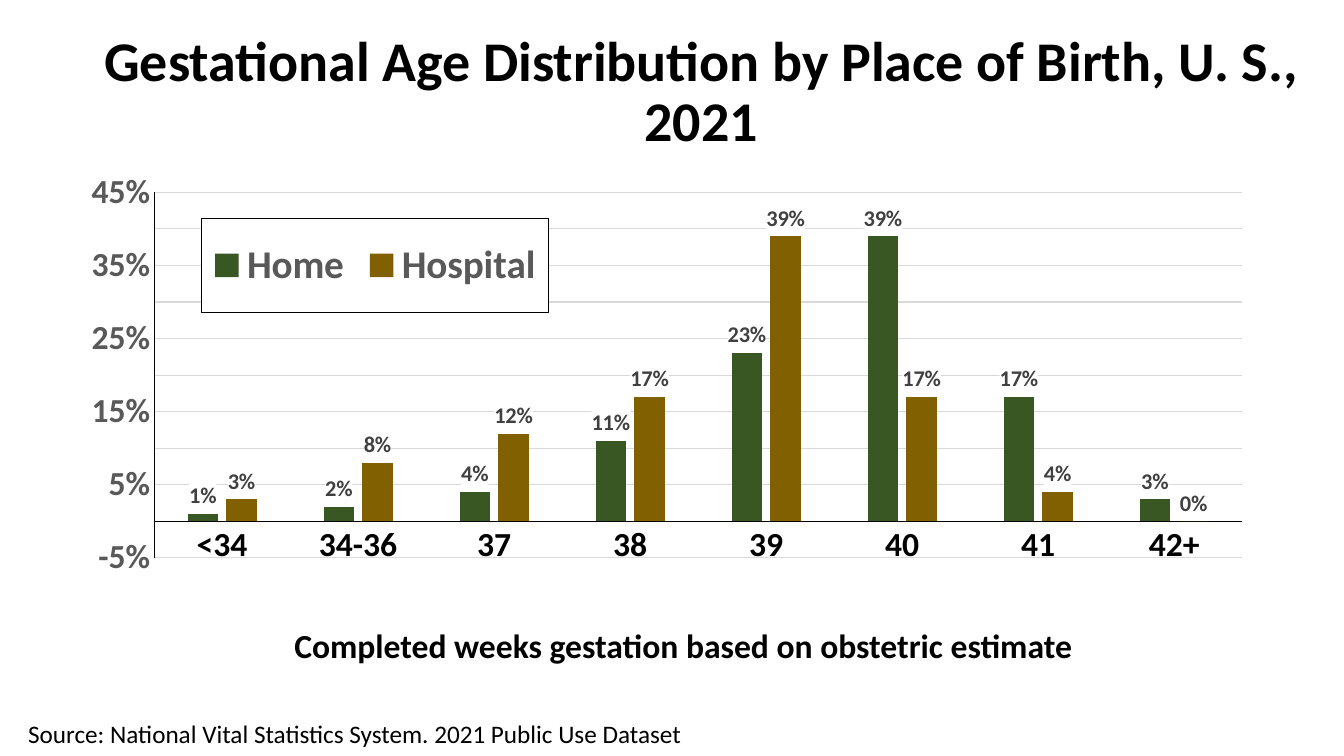
import pptx
import pptx.chart.data
import pptx.dml.color
import pptx.enum.chart
import pptx.enum.text
import pptx.oxml
import pptx.oxml.ns
import pptx.util
from pptx.util import Inches

BLACK = pptx.dml.color.RGBColor(0x00, 0x00, 0x00)
WHITE = pptx.dml.color.RGBColor(0xFF, 0xFF, 0xFF)
AXIS_GREY = pptx.dml.color.RGBColor(0x59, 0x59, 0x59)
LABEL_GREY = pptx.dml.color.RGBColor(0x40, 0x40, 0x40)
GRID_GREY = pptx.dml.color.RGBColor(0xD9, 0xD9, 0xD9)
HOME_GREEN = pptx.dml.color.RGBColor(0x38, 0x57, 0x23)
HOSPITAL_BROWN = pptx.dml.color.RGBColor(0x80, 0x60, 0x00)

FONT = "Calibri"
PERCENT = "0%"
WEEKS = ["<34", "34-36", "37", "38", "39", "40", "41", "42+"]
BIRTHS = [
    ("Home", [0.01, 0.02, 0.04, 0.11, 0.23, 0.39, 0.17, 0.03], HOME_GREEN),
    ("Hospital", [0.03, 0.08, 0.12, 0.17, 0.39, 0.17, 0.04, 0], HOSPITAL_BROWN),
]


def style_font(font, size, color, bold=True):
    """Set typeface, size, colour and weight of a font."""
    font.name = FONT
    font.size = pptx.util.Pt(size)
    font.bold = bold
    font.color.rgb = color


def style_line(line, color):
    """Give a line a colour and the chart's common width."""
    line.color.rgb = color
    line.width = pptx.util.Pt(0.75)


def add_text(slide, text, box, size, bold=True, wrap=True):
    """Add a one-paragraph text box and return its shape."""
    shape = slide.shapes.add_textbox(*map(Inches, box))
    shape.text_frame.word_wrap = wrap
    paragraph = shape.text_frame.paragraphs[0]
    paragraph.text = text
    style_font(paragraph.runs[0].font, size, BLACK, bold)
    return shape


def add_title(slide, text):
    """Add the centred slide title."""
    frame = add_text(slide, text, (0.74, 0.2, 12.43, 1.45), 40).text_frame
    frame.vertical_anchor = pptx.enum.text.MSO_ANCHOR.MIDDLE
    frame.paragraphs[0].alignment = pptx.enum.text.PP_ALIGN.CENTER
    frame.paragraphs[0].line_spacing = 0.9


def chart_xml(tag, content):
    """Build a chart element from its tag and inner XML."""
    spaces = pptx.oxml.ns.nsdecls("c", "a")
    return pptx.oxml.parse_xml(f"<c:{tag} {spaces}>{content}</c:{tag}>")


def solid_fill(color):
    """Return the XML of a solid fill."""
    return f'<a:solidFill><a:srgbClr val="{color}"/></a:solidFill>'


def manual_layout(x, y, w, h, target=""):
    """Build a manual layout from fractions of the chart area."""
    modes = '<c:xMode val="edge"/><c:yMode val="edge"/>'
    sizes = zip("xywh", (x, y, w, h))
    values = "".join(f'<c:{key} val="{value}"/>' for key, value in sizes)
    return chart_xml("layout", f"<c:manualLayout>{target}{modes}{values}</c:manualLayout>")


def style_axes(chart):
    """Format both axes and the gridlines."""
    weeks, share = chart.category_axis, chart.value_axis
    for axis, color in ((weeks, BLACK), (share, AXIS_GREY)):
        style_font(axis.tick_labels.font, 24, color)
        style_line(axis.format.line, BLACK)
        axis.major_tick_mark = pptx.enum.chart.XL_TICK_MARK.NONE
        axis.minor_tick_mark = pptx.enum.chart.XL_TICK_MARK.NONE
    share.minimum_scale, share.maximum_scale = -0.05, 0.45
    share.major_unit = 0.05
    share.tick_labels.number_format = PERCENT
    share.tick_labels.number_format_is_linked = False
    share.has_major_gridlines = True
    style_line(share.major_gridlines.format.line, GRID_GREY)


def style_series(series, color):
    """Colour a series and show its values."""
    series.format.fill.solid()
    series.format.fill.fore_color.rgb = color
    series.invert_if_negative = False
    labels = series.data_labels
    style_font(labels.font, 16, LABEL_GREY)
    labels.number_format = PERCENT
    labels.number_format_is_linked = False
    labels.show_value = True
    labels.position = pptx.enum.chart.XL_LABEL_POSITION.OUTSIDE_END


def whiten_labels(chart):
    """Put a white ground behind all value labels."""
    for number_format in chart.element.xpath("//c:dLbls/c:numFmt"):
        number_format.addnext(chart_xml("spPr", solid_fill(WHITE)))


def add_legend(chart):
    """Place the framed legend over the plot."""
    chart.has_legend = True
    legend = chart.legend
    legend.position = pptx.enum.chart.XL_LEGEND_POSITION.BOTTOM
    legend.include_in_layout = False
    style_font(legend.font, 28, AXIS_GREY)
    root = chart.element
    for layout in root.xpath("//c:legend/c:layout"):
        layout.getparent().remove(layout)
    root.xpath("//c:legend/c:legendPos")[0].addnext(manual_layout(0.12, 0.1, 0.29, 0.18))
    frame = f'{solid_fill(WHITE)}<a:ln w="9525">{solid_fill(BLACK)}</a:ln>'
    root.xpath("//c:legend/c:overlay")[0].addnext(chart_xml("spPr", frame))


def add_birth_chart(slide):
    """Add the clustered columns of births by gestational age."""
    data = pptx.chart.data.CategoryChartData(number_format=PERCENT)
    data.categories = WEEKS
    for place, shares, _ in BIRTHS:
        data.add_series(place, shares)
    kind = pptx.enum.chart.XL_CHART_TYPE.COLUMN_CLUSTERED
    box = map(Inches, (0.58, 1.65, 11.86, 5.18))
    chart = slide.shapes.add_chart(kind, *box, data).chart
    chart.has_title = False
    style_font(chart.font, 10, BLACK, False)
    plot = chart.plots[0]
    plot.gap_width, plot.overlap = 219, -27
    plot.vary_by_categories = False
    for series, (_, _, color) in zip(plot.series, BIRTHS):
        style_series(series, color)
    whiten_labels(chart)
    style_axes(chart)
    add_legend(chart)
    area = chart.element.xpath("//c:plotArea")[0]
    for layout in area.xpath("c:layout"):
        area.remove(layout)
    inner = '<c:layoutTarget val="inner"/>'
    area.insert(0, manual_layout(0.08, 0.05, 0.91, 0.7, inner))


def main():
    """Build and save the slide."""
    deck = pptx.Presentation()
    deck.slide_width, deck.slide_height = Inches(13.33), Inches(7.5)
    slide = deck.slides.add_slide(deck.slide_layouts[6])
    add_title(slide, "Gestational Age Distribution by Place of Birth, U. S., 2021")
    add_birth_chart(slide)
    add_text(slide, "Completed weeks gestation based on obstetric estimate",
             (2.82, 6.15, 8.01, 0.5), 24, wrap=False)
    add_text(slide, "Source: National Vital Statistics System. 2021 Public Use Dataset",
             (0.18, 7.08, 7.65, 0.4), 18, bold=False)
    deck.save("out.pptx")


if __name__ == "__main__":
    main()
